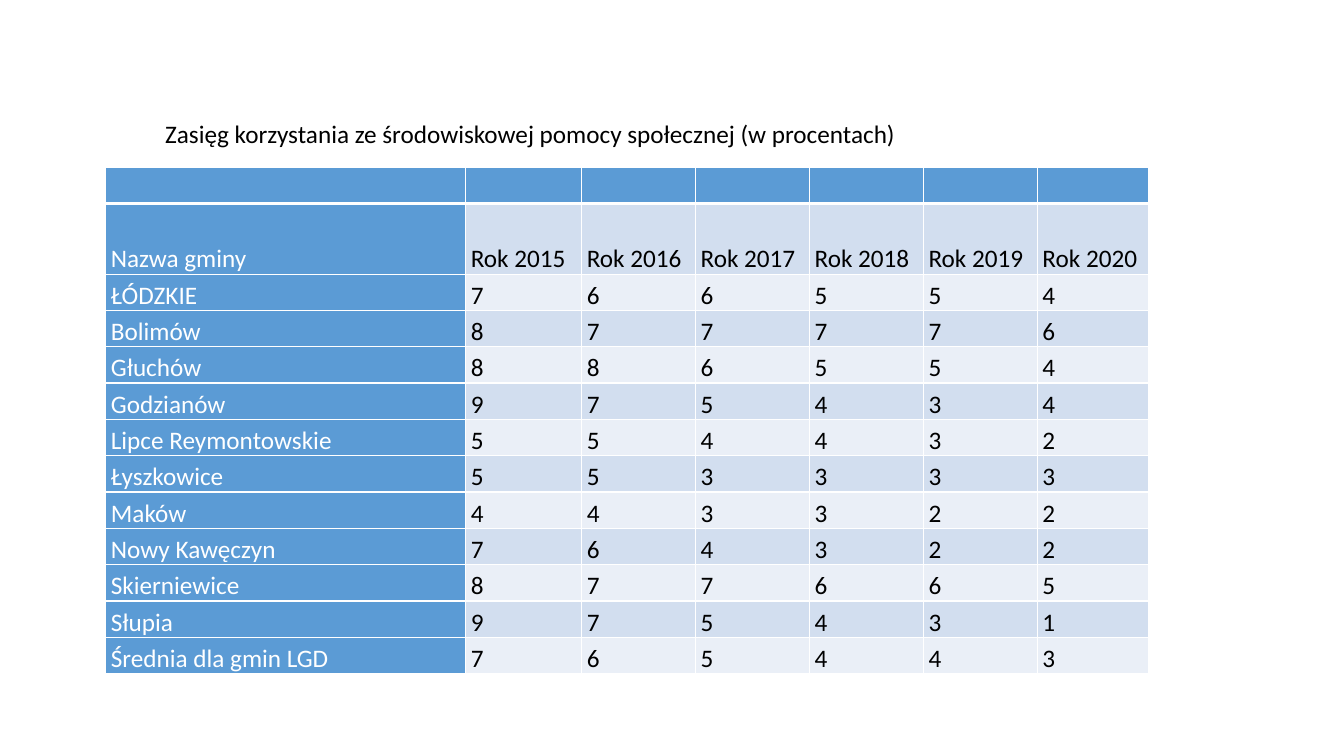
from dataclasses import dataclass

from lxml.etree import SubElement
from pptx import Presentation
from pptx.dml.color import RGBColor
from pptx.enum.text import MSO_ANCHOR as Anchor, MSO_AUTO_SIZE as AutoSize, PP_ALIGN as Align
from pptx.oxml.ns import qn
from pptx.util import Inches, Pt

FONT = "Calibri"
BLUE, BAND_DARK, BAND_LIGHT = "5B9BD5", "D2DEEF", "EAEFF7"
WHITE, BLACK = "FFFFFF", "000000"
COLUMN_WIDTHS = [3.57, 1.15, 1.13, 1.13, 1.13, 1.13, 1.1]
ROW_HEIGHT, YEAR_ROW_HEIGHT = 0.36, 0.7


@dataclass(frozen=True)
class Row:
    name: str
    values: tuple
    height: float = ROW_HEIGHT


ROWS = [
    Row("", ("",) * 6),
    Row("Nazwa gminy", tuple(f"Rok {year}" for year in range(2015, 2021)), YEAR_ROW_HEIGHT),
    Row("ŁÓDZKIE", (7, 6, 6, 5, 5, 4)),
    Row("Bolimów", (8, 7, 7, 7, 7, 6)),
    Row("Głuchów", (8, 8, 6, 5, 5, 4)),
    Row("Godzianów", (9, 7, 5, 4, 3, 4)),
    Row("Lipce Reymontowskie", (5, 5, 4, 4, 3, 2)),
    Row("Łyszkowice", (5, 5, 3, 3, 3, 3)),
    Row("Maków", (4, 4, 3, 3, 2, 2)),
    Row("Nowy Kawęczyn", (7, 6, 4, 3, 2, 2)),
    Row("Skierniewice", (8, 7, 7, 6, 6, 5)),
    Row("Słupia", (9, 7, 5, 4, 3, 1)),
    Row("Średnia dla gmin LGD", (7, 6, 5, 4, 4, 3)),
]


def color(value: str) -> RGBColor:
    return RGBColor.from_string(value)


def add_text(para, text: str, ink: str) -> None:
    span = para.add_run()
    span.text = text
    span.font.name = FONT
    span.font.size = Pt(18)
    span.font.color.rgb = color(ink)


def add_borders(cell, row_index: int) -> None:
    """Draw thin white borders, with a thick one below the top row."""
    properties = cell._tc.get_or_add_tcPr()
    thick_side = {0: "B", 1: "T"}.get(row_index)
    for side in "LRTB":
        width = 3 if side == thick_side else 1
        line = SubElement(properties, qn(f"a:ln{side}"), w=str(Pt(width)))
        fill = SubElement(line, qn("a:solidFill"))
        SubElement(fill, qn("a:srgbClr"), val=WHITE)


def fill_cell(cell, text: str, row_index: int, column_index: int) -> None:
    is_heading = row_index == 0 or column_index == 0
    add_borders(cell, row_index)
    band = BAND_DARK if row_index % 2 else BAND_LIGHT
    cell.fill.solid()
    cell.fill.fore_color.rgb = color(BLUE if is_heading else band)
    cell.vertical_anchor = Anchor.BOTTOM
    cell.margin_left = cell.margin_right = Inches(0.05)
    cell.margin_top = cell.margin_bottom = 0
    para = cell.text_frame.paragraphs[0]
    para.alignment = Align.JUSTIFY
    para.line_spacing = 1.2
    para.space_before = para.space_after = Pt(6)
    if text:
        add_text(para, text, WHITE if is_heading else BLACK)


def add_title(page) -> None:
    box = page.shapes.add_textbox(Inches(1.54), Inches(1.12), Inches(9.35), Inches(0.4))
    box.text_frame.word_wrap = True
    box.text_frame.auto_size = AutoSize.SHAPE_TO_FIT_TEXT
    title = "Zasięg korzystania ze środowiskowej pomocy społecznej (w procentach)"
    add_text(box.text_frame.paragraphs[0], title, BLACK)


def add_welfare_table(page) -> None:
    table = page.shapes.add_table(
        len(ROWS), len(COLUMN_WIDTHS), Inches(1.05), Inches(1.66),
        Inches(sum(COLUMN_WIDTHS)), Inches(sum(row.height for row in ROWS)),
    ).table
    table.first_col = True
    for column, width in zip(table.columns, COLUMN_WIDTHS):
        column.width = Inches(width)
    for row_index, row in enumerate(ROWS):
        table.rows[row_index].height = Inches(row.height)
        for column_index, value in enumerate((row.name, *row.values)):
            fill_cell(table.cell(row_index, column_index), str(value), row_index, column_index)


def main() -> None:
    deck = Presentation()
    deck.slide_width, deck.slide_height = Inches(13.33), Inches(7.5)
    page = deck.slides.add_slide(deck.slide_layouts[6])
    add_title(page)
    add_welfare_table(page)
    deck.save("out.pptx")


if __name__ == "__main__":
    main()
